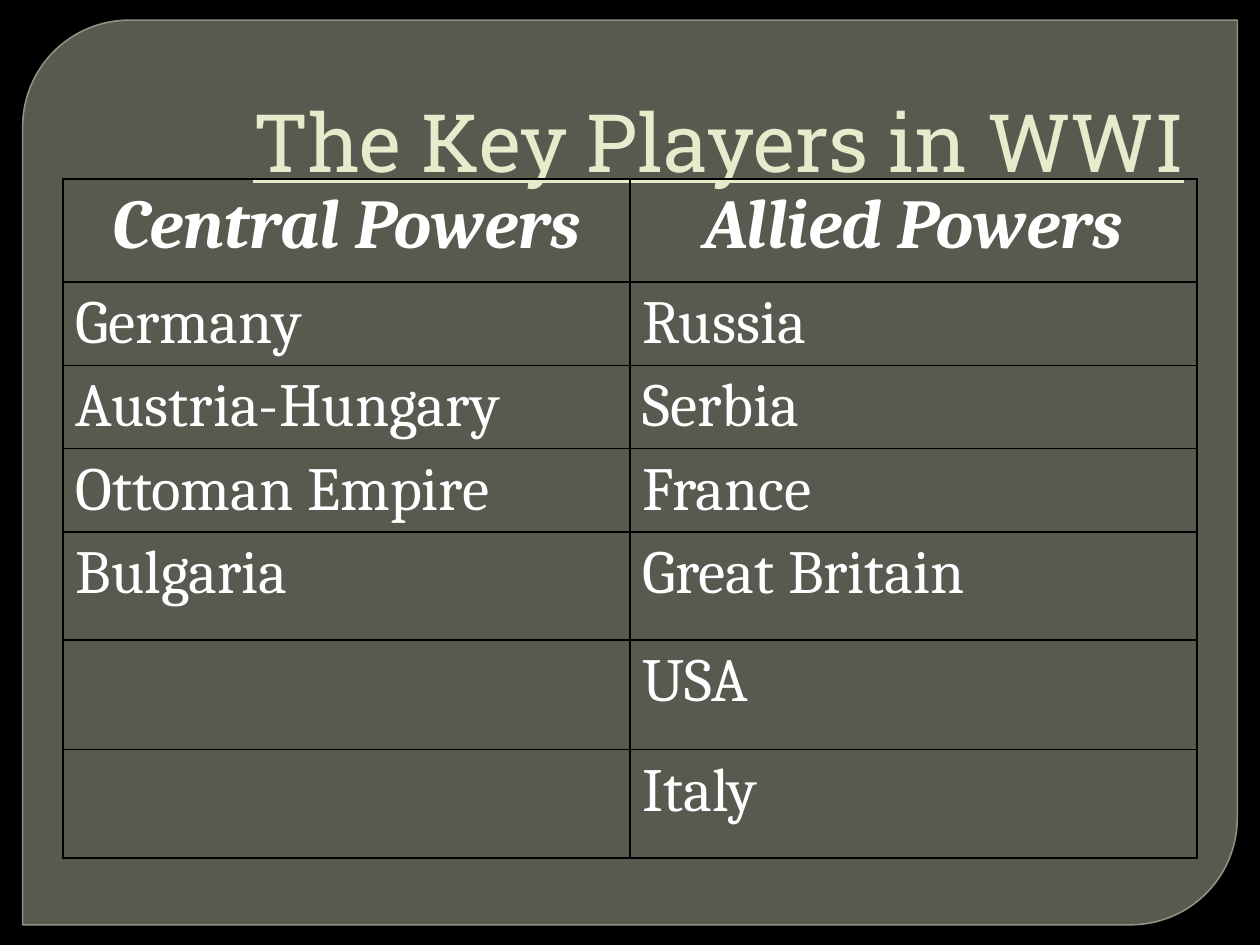
from dataclasses import dataclass

from lxml import etree
from pptx import Presentation
from pptx.dml.color import RGBColor
from pptx.enum.shapes import MSO_SHAPE
from pptx.enum.text import MSO_ANCHOR, PP_ALIGN
from pptx.oxml.ns import qn
from pptx.util import Inches, Pt

PANEL_SHAPE = MSO_SHAPE.ROUND_2_DIAG_RECTANGLE
BOTTOM = MSO_ANCHOR.BOTTOM
LEFT, CENTER, RIGHT = PP_ALIGN.LEFT, PP_ALIGN.CENTER, PP_ALIGN.RIGHT
COLORS = {
    "background": "000000",
    "panel": "888B7B",
    "outline": "9DA090",
    "title": "E7EACB",
    "text": "FFFFFF",
    "border": "000000",
}


@dataclass(frozen=True)
class CellStyle:
    size: float
    align: PP_ALIGN
    emphasis: bool


@dataclass(frozen=True)
class Row:
    central: str
    allied: str
    height: float
    style: CellStyle


HEADING = CellStyle(40, CENTER, True)
COUNTRY = CellStyle(35, LEFT, False)
ROWS = [
    Row("Central Powers", "Allied Powers", 0.82, HEADING),
    Row("Germany", "Russia", 0.66, COUNTRY),
    Row("Austria-Hungary", "Serbia", 0.66, COUNTRY),
    Row("Ottoman Empire", "France", 0.66, COUNTRY),
    Row("Bulgaria", "Great Britain", 0.86, COUNTRY),
    Row("", "USA", 0.87, COUNTRY),
    Row("", "Italy", 0.86, COUNTRY),
]


def rgb(name: str) -> RGBColor:
    return RGBColor.from_string(COLORS[name])


def set_opacity(parent, percent: int) -> None:
    color = parent.find(".//" + qn("a:srgbClr"))
    etree.SubElement(color, qn("a:alpha"), val=str(percent * 1000))


def add_panel(slide) -> None:
    panel = slide.shapes.add_shape(
        PANEL_SHAPE, Inches(0.18), Inches(0.16), Inches(9.64), Inches(7.18)
    )
    panel.adjustments[0] = 0.118
    panel.adjustments[1] = 0
    panel.shadow.inherit = False
    panel.fill.solid()
    panel.fill.fore_color.rgb = rgb("panel")
    panel.line.color.rgb = rgb("outline")
    panel.line.width = Pt(0.87)
    properties = panel._element.spPr
    set_opacity(properties.find(qn("a:solidFill")), 65)
    set_opacity(properties.find(qn("a:ln")), 88)
    slide.shapes._spTree.insert(2, panel._element)


def format_title(title) -> None:
    title.left, title.top = Inches(0.5), Inches(0.3)
    title.width, title.height = Inches(9), Inches(1.25)
    title.text_frame.text = "The Key Players in WWI"
    title.text_frame.vertical_anchor = BOTTOM
    paragraph = title.text_frame.paragraphs[0]
    paragraph.alignment = RIGHT
    paragraph.font.name = "Roboto Slab"
    paragraph.font.size = Pt(46)
    paragraph.font.underline = True
    paragraph.font.color.rgb = rgb("title")


def add_borders(cell) -> None:
    properties = cell._tc.get_or_add_tcPr()
    for position, side in enumerate(("a:lnL", "a:lnR", "a:lnT", "a:lnB")):
        border = etree.Element(qn(side), w=str(Pt(1)))
        fill = etree.SubElement(border, qn("a:solidFill"))
        etree.SubElement(fill, qn("a:srgbClr"), val=COLORS["border"])
        properties.insert(position, border)


def fill_cell(cell, text: str, style: CellStyle) -> None:
    cell.fill.background()
    add_borders(cell)
    if not text:
        return
    cell.text = text
    paragraph = cell.text_frame.paragraphs[0]
    paragraph.alignment = style.align
    paragraph.font.name = "Cambria"
    paragraph.font.size = Pt(style.size)
    paragraph.font.bold = style.emphasis
    paragraph.font.italic = style.emphasis
    paragraph.font.color.rgb = rgb("text")


def add_powers_table(slide) -> None:
    height = sum(row.height for row in ROWS)
    powers = slide.shapes.add_table(
        len(ROWS), 2, Inches(0.5), Inches(1.42), Inches(9), Inches(height)
    ).table
    powers.first_row = False
    powers.horz_banding = False
    for index, row in enumerate(ROWS):
        powers.rows[index].height = Inches(row.height)
        for column, country in enumerate((row.central, row.allied)):
            fill_cell(powers.cell(index, column), country, row.style)


def main() -> None:
    presentation = Presentation()
    presentation.slide_width = Inches(10)
    presentation.slide_height = Inches(7.5)
    slide = presentation.slides.add_slide(presentation.slide_layouts[5])
    slide.background.fill.solid()
    slide.background.fill.fore_color.rgb = rgb("background")
    add_panel(slide)
    format_title(slide.shapes.title)
    add_powers_table(slide)
    presentation.save("out.pptx")


if __name__ == "__main__":
    main()
